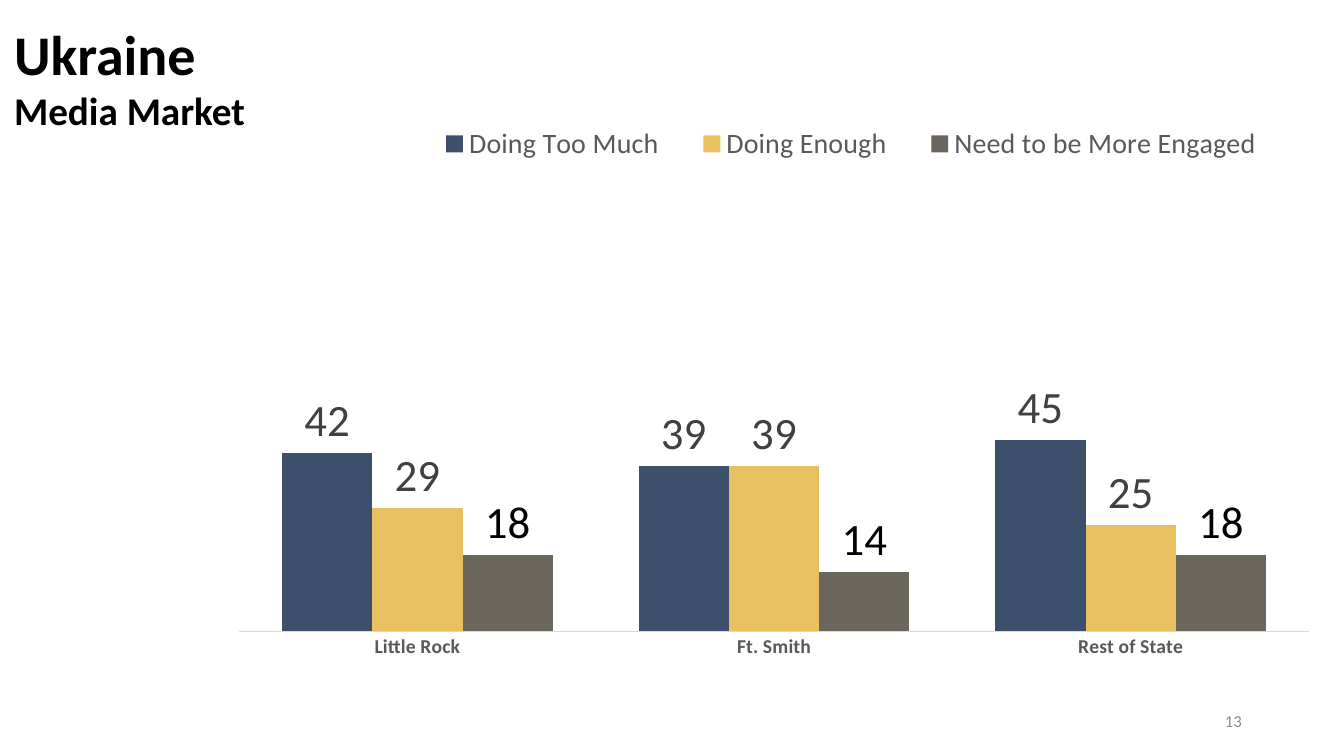
"""Build a slide with a clustered column chart of opinion on Ukraine by media market."""
from dataclasses import dataclass

from lxml import etree
from pptx import Presentation
from pptx.chart.data import CategoryChartData
from pptx.dml.color import RGBColor
from pptx.enum.chart import XL_CHART_TYPE, XL_LABEL_POSITION, XL_LEGEND_POSITION, XL_TICK_MARK
from pptx.enum.text import MSO_ANCHOR, MSO_AUTO_SIZE, PP_ALIGN
from pptx.oxml.ns import qn
from pptx.util import Cm, Pt

COLUMNS = XL_CHART_TYPE.COLUMN_CLUSTERED
LABEL_ABOVE = XL_LABEL_POSITION.OUTSIDE_END
LEGEND_TOP = XL_LEGEND_POSITION.TOP
NO_TICK = XL_TICK_MARK.NONE
TOP, MIDDLE = MSO_ANCHOR.TOP, MSO_ANCHOR.MIDDLE
LEFT, RIGHT = PP_ALIGN.LEFT, PP_ALIGN.RIGHT
NO_AUTOFIT = MSO_AUTO_SIZE.NONE


@dataclass(frozen=True)
class Theme:
    font: str = "Calibri"
    black: str = "000000"
    label: str = "404040"
    muted: str = "595959"
    page: str = "8C8C8C"
    axis: str = "D9D9D9"
    navy: str = "3C4F6B"
    gold: str = "E8C062"
    taupe: str = "6B665B"
    title_size: int = 40
    label_size: int = 32
    subtitle_size: int = 28
    legend_size: int = 20
    category_size: int = 14
    page_size: int = 12
    chart_size: int = 10


THEME = Theme()
CATEGORIES = ["Little Rock", "Ft. Smith", "Rest of State"]
SERIES = [
    ("Doing Too Much", (42, 39, 45), THEME.navy, THEME.label),
    ("Doing Enough", (29, 39, 25), THEME.gold, THEME.label),
    ("Need to be More Engaged", (18, 14, 18), THEME.taupe, THEME.black),
]


def style_font(font, size, color, bold=False):
    font.name = THEME.font
    font.size = Pt(size)
    font.bold = bold
    font.color.rgb = RGBColor.from_string(color)


def place_chart_part(part, index, settings):
    for old_layout in part.findall(qn("c:layout")):
        part.remove(old_layout)
    layout = etree.Element(qn("c:layout"))
    manual = etree.SubElement(layout, qn("c:manualLayout"))
    for name, value in settings.items():
        etree.SubElement(manual, qn(f"c:{name}")).set("val", str(value))
    part.insert(index, layout)


presentation = Presentation()
presentation.slide_width = Cm(33.87)
presentation.slide_height = Cm(19.05)
slide = presentation.slides.add_slide(presentation.slide_layouts[5])

chart_data = CategoryChartData()
chart_data.categories = CATEGORIES
for name, values, _, _ in SERIES:
    chart_data.add_series(name, values)
chart = slide.shapes.add_chart(
    COLUMNS, Cm(5.64), Cm(1.35), Cm(27.74), Cm(15.7), chart_data
).chart
chart.has_title = False
style_font(chart.font, THEME.chart_size, THEME.black)

category_axis = chart.category_axis
category_axis.major_tick_mark = NO_TICK
category_axis.format.line.color.rgb = RGBColor.from_string(THEME.axis)
category_axis.format.line.width = Pt(0.75)
style_font(category_axis.tick_labels.font, THEME.category_size, THEME.muted, bold=True)

value_axis = chart.value_axis
value_axis.minimum_scale = 0
value_axis.maximum_scale = 100
value_axis.has_major_gridlines = False
value_axis.visible = False

plot = chart.plots[0]
plot.gap_width = 95
plot.vary_by_categories = False
for series, (_, _, fill_color, label_color) in zip(plot.series, SERIES):
    series.format.fill.solid()
    series.format.fill.fore_color.rgb = RGBColor.from_string(fill_color)
    labels = series.data_labels
    labels.show_value = True
    labels.position = LABEL_ABOVE
    style_font(labels.font, THEME.label_size, label_color)

chart.has_legend = True
chart.legend.position = LEGEND_TOP
chart.legend.include_in_layout = False
style_font(chart.legend.font, THEME.legend_size, THEME.muted)

edges = {"xMode": "edge", "yMode": "edge"}
place_chart_part(
    chart.element.xpath("c:chart/c:plotArea")[0], 0,
    {"layoutTarget": "inner", **edges, "x": 0.014, "y": 0.247, "w": 0.972, "h": 0.68},
)
place_chart_part(
    chart.element.xpath("c:chart/c:legend")[0], 1,
    {**edges, "x": 0.17, "y": 0.1, "w": 0.8, "h": 0.09},
)

title = slide.shapes.title
title.left, title.top, title.width, title.height = Cm(0.1), Cm(0.36), Cm(20.98), Cm(4.88)
title_frame = title.text_frame
title_frame.text = "Ukraine\nMedia Market"
title_frame.auto_size = NO_AUTOFIT
title_frame.vertical_anchor = TOP
for paragraph, size in zip(title_frame.paragraphs, (THEME.title_size, THEME.subtitle_size)):
    paragraph.alignment = LEFT
    style_font(paragraph.runs[0].font, size, THEME.black, bold=True)

page_number = slide.shapes.add_textbox(Cm(23.93), Cm(17.65), Cm(7.62), Cm(1.02))
page_frame = page_number.text_frame
page_frame.word_wrap = True
page_frame.vertical_anchor = MIDDLE
page_frame.text = "13"
page_frame.paragraphs[0].alignment = RIGHT
style_font(page_frame.paragraphs[0].runs[0].font, THEME.page_size, THEME.page)

presentation.save("out.pptx")
